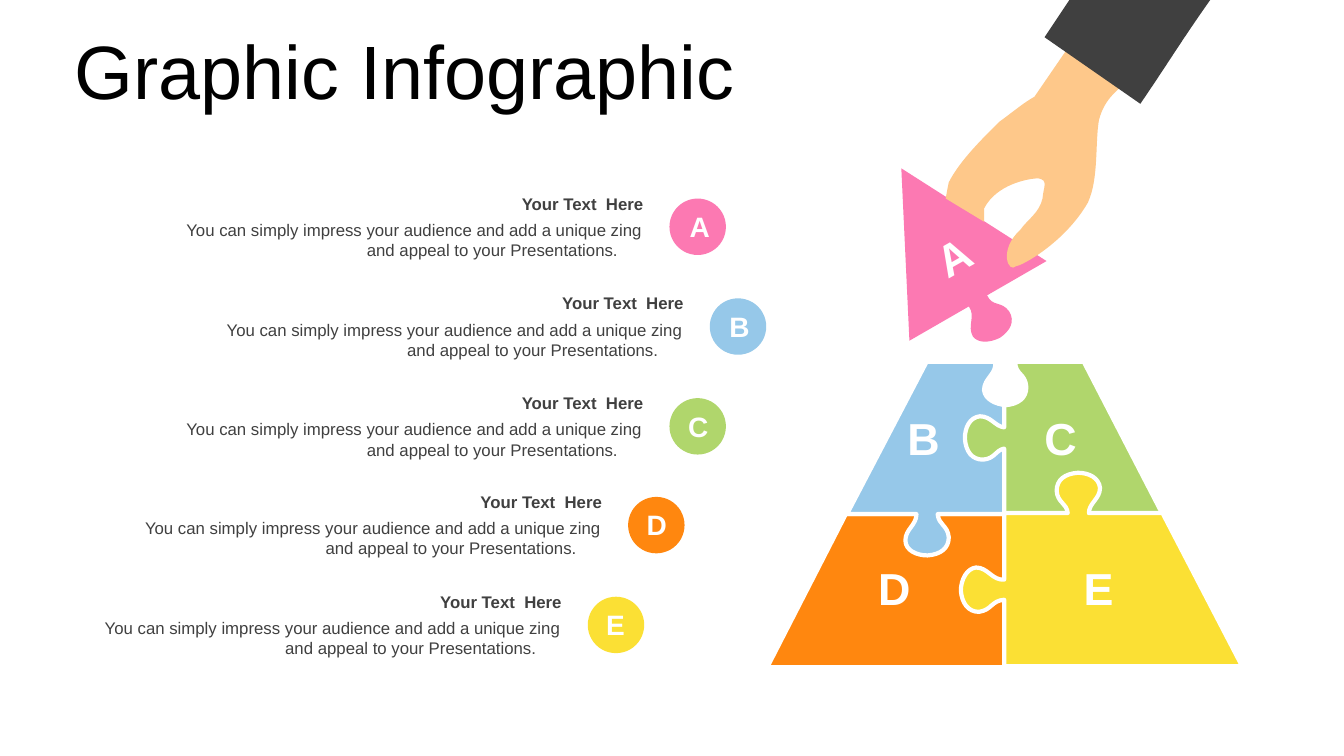
import math

from lxml import etree
from pptx import Presentation
from pptx.dml.color import RGBColor
from pptx.enum import shapes, text
from pptx.oxml import ns

PX = 9144  # EMU per px, 100 px to the inch
THEME = {
    "font": "Arial",
    "A": "FC79B2", "B": "96C8E9", "C": "B0D66C", "D": "FF870F", "E": "FBE034",
    "white": "FFFFFF", "title": "000000", "body": "404040",
    "skin": "FEC88A", "sleeve": "404040",
    "title_pt": 54, "piece_pt": 32, "badge_pt": 20, "body_pt": 12, "edge_pt": 3,
}
LEFT, CENTER, RIGHT = text.PP_ALIGN.LEFT, text.PP_ALIGN.CENTER, text.PP_ALIGN.RIGHT
HEADING = "Your Text  Here"
BODY = ("You can simply impress your audience and add a unique zing "
        "and appeal to your Presentations.")
HANG = {"marL": 181, "indent": -179}  # the second body line starts further in


def add_label(box, words, size, color, bold=True, align=LEFT, wrap=True):
    sp = slide.shapes.add_textbox(*(v * PX for v in box))
    tf = sp.text_frame
    tf.word_wrap = wrap
    tf.auto_size = text.MSO_AUTO_SIZE.SHAPE_TO_FIT_TEXT
    p = tf.paragraphs[0]
    p.alignment = align
    r = p.add_run()
    r.text = words
    font_format = {"name": THEME["font"], "size": THEME[size] * 12700, "bold": bold}
    for name, value in font_format.items():
        setattr(r.font, name, value)
    r.font.color.rgb = RGBColor.from_string(THEME[color])
    return sp


def add_outline(steps, color, edge=False, turn=0):
    """Draw a closed outline of lines (x, y) and cubic curves (6 numbers).

    The steps are slide positions as seen after the shape is turned.
    """
    cos, sin = math.cos(math.radians(turn)), math.sin(math.radians(turn))
    flat = [step[i:i + 2] for step in steps for i in range(0, len(step), 2)]
    points = [((x * cos + y * sin) * PX, (y * cos - x * sin) * PX) for x, y in flat]
    builder = slide.shapes.build_freeform(*points[0], scale=1.0)
    builder.add_line_segments(points[1:], close=True)
    sp = builder.convert_to_shape()
    mid_x, mid_y = sp.left + sp.width / 2, sp.top + sp.height / 2
    sp.left = round(mid_x * cos - mid_y * sin - sp.width / 2)
    sp.top = round(mid_x * sin + mid_y * cos - sp.height / 2)
    sp.rotation = turn

    segments = iter(list(sp._element.iter(ns.qn("a:lnTo"))))
    for step in steps[1:]:
        segment = next(segments)
        if len(step) == 6:
            curve = etree.Element(ns.qn("a:cubicBezTo"))
            segment.addprevious(curve)
            for part in (segment, next(segments), next(segments)):
                curve.append(part[0])
                part.getparent().remove(part)

    sp.shadow.inherit = False
    sp.fill.solid()
    sp.fill.fore_color.rgb = RGBColor.from_string(THEME[color])
    if edge:
        sp.line.color.rgb = RGBColor.from_string(THEME["white"])
        sp.line.width = THEME["edge_pt"] * 12700
    else:
        sp.line.fill.background()


prs = Presentation()
prs.slide_width, prs.slide_height = 1333 * PX, 750 * PX
slide = prs.slides.add_slide(prs.slide_layouts[5])

# Title
title = slide.shapes.title
title_box = {"left": 64, "top": 28, "width": 1270, "height": 92}
for name, value in title_box.items():
    setattr(title, name, value * PX)
tf = title.text_frame
tf.text = "Graphic Infographic"
tf.auto_size = text.MSO_AUTO_SIZE.NONE
tf.vertical_anchor = text.MSO_ANCHOR.MIDDLE
p = tf.paragraphs[0]
p.alignment, p.line_spacing = LEFT, 0.9
font = p.runs[0].font
for name, value in {"name": THEME["font"], "size": THEME["title_pt"] * 12700}.items():
    setattr(font, name, value)
font.color.rgb = RGBColor.from_string(THEME["title"])

# Lettered list: badge x and y, letter inset and width
rows = {"A": (664, 197, 10, 35), "B": (704, 296, 9, 41), "C": (664, 395, 8, 41),
        "D": (623, 493, 8, 41), "E": (583, 592, 8, 39)}
for letter, (x, y, inset, w) in rows.items():
    badge = slide.shapes.add_shape(shapes.MSO_SHAPE.OVAL, x * PX, y * PX, 56 * PX, 56 * PX)
    badge.shadow.inherit = False
    badge.fill.solid()
    badge.fill.fore_color.rgb = RGBColor.from_string(THEME[letter])
    badge.line.fill.background()
    add_label((x + inset, y + 6, w, 44), letter, "badge_pt", "white", align=CENTER)
    sp = add_label((x - 491, y + 16, 475, 50), BODY, "body_pt", "body", bold=False)
    pPr = sp.text_frame.paragraphs[0]._p.get_or_add_pPr()
    for name, value in HANG.items():
        pPr.set(name, str(value * PX))
    add_label((x - 491, y - 10, 475, 30), HEADING, "body_pt", "body", align=RIGHT)

# Puzzle pyramid, back to front
add_outline([(839, 510), (997, 510), (997, 662), (761, 662)], "D", edge=True)
add_outline([
    (894, 167), (1038, 259), (979, 293),
    (985, 305, 993, 298, 1001, 309), (1007, 319, 1002, 328, 992, 335),
    (982, 340, 971, 341, 965, 334), (959, 323, 968, 314, 961, 304), (902, 338),
], "A", turn=330)
add_outline([
    (919, 359), (987, 359),
    (989, 371, 976, 375, 976, 387), (977, 396, 987, 401, 998, 402),
    (998, 510), (930, 510),
    (931, 521, 940, 521, 941, 533), (941, 544, 933, 550, 920, 551),
    (909, 551, 898, 546, 898, 536), (898, 525, 909, 521, 909, 510), (840, 510),
], "B", edge=True)
add_outline([
    (1007, 359), (1075, 359), (1153, 510), (996, 510), (996, 445),
    (987, 447, 987, 455, 975, 456), (964, 456, 958, 448, 957, 435),
    (957, 424, 962, 414, 972, 413), (983, 413, 987, 423, 996, 424),
    (996, 402), (997, 402),
    (1010, 401, 1018, 395, 1018, 384), (1017, 370, 1007, 372, 1007, 359),
], "C", edge=True)
add_outline([
    (1069, 469),
    (1080, 469, 1090, 474, 1091, 484), (1091, 495, 1080, 499, 1080, 509),
    (1153, 509), (1232, 661), (996, 661), (996, 595),
    (983, 596, 984, 605, 971, 607), (960, 607, 954, 598, 953, 586),
    (953, 575, 959, 564, 968, 563), (980, 563, 984, 576, 996, 575),
    (996, 509), (1059, 509),
    (1058, 499, 1049, 499, 1048, 487), (1048, 476, 1056, 470, 1069, 469),
], "E", edge=True)

piece_letters = {"A": (920, 223, 47), "B": (890, 403, 45), "C": (1026, 403, 44),
                 "D": (861, 551, 48), "E": (1065, 551, 42)}
for letter, (x, y, w) in piece_letters.items():
    sp = add_label((x, y, w, 64), letter, "piece_pt", "white", wrap=False)
    if letter == "A":
        sp.rotation = 330.4

# Hand and sleeve
add_outline([
    (1061, 45), (1129, 70),
    (1107, 91, 1096, 97, 1090, 119), (1086, 142, 1090, 177, 1079, 201),
    (1056, 241, 1013, 264, 1008, 264), (1000, 272, 990, 248, 1012, 228),
    (1019, 218, 1031, 211, 1034, 197), (1035, 185, 1040, 179, 1030, 177),
    (1020, 177, 988, 183, 976, 207), (976, 211, 976, 216, 976, 220),
    (938, 197),
    (939, 191, 940, 186, 941, 181), (952, 159, 977, 135, 991, 121),
    (1010, 107, 1014, 103, 1026, 96),
], "skin")
add_outline([
    (1062, -2), (1201, -1), (1170, 43, 1161, 59, 1131, 103), (1036, 37),
], "sleeve", turn=34.5)

prs.save("out.pptx")
